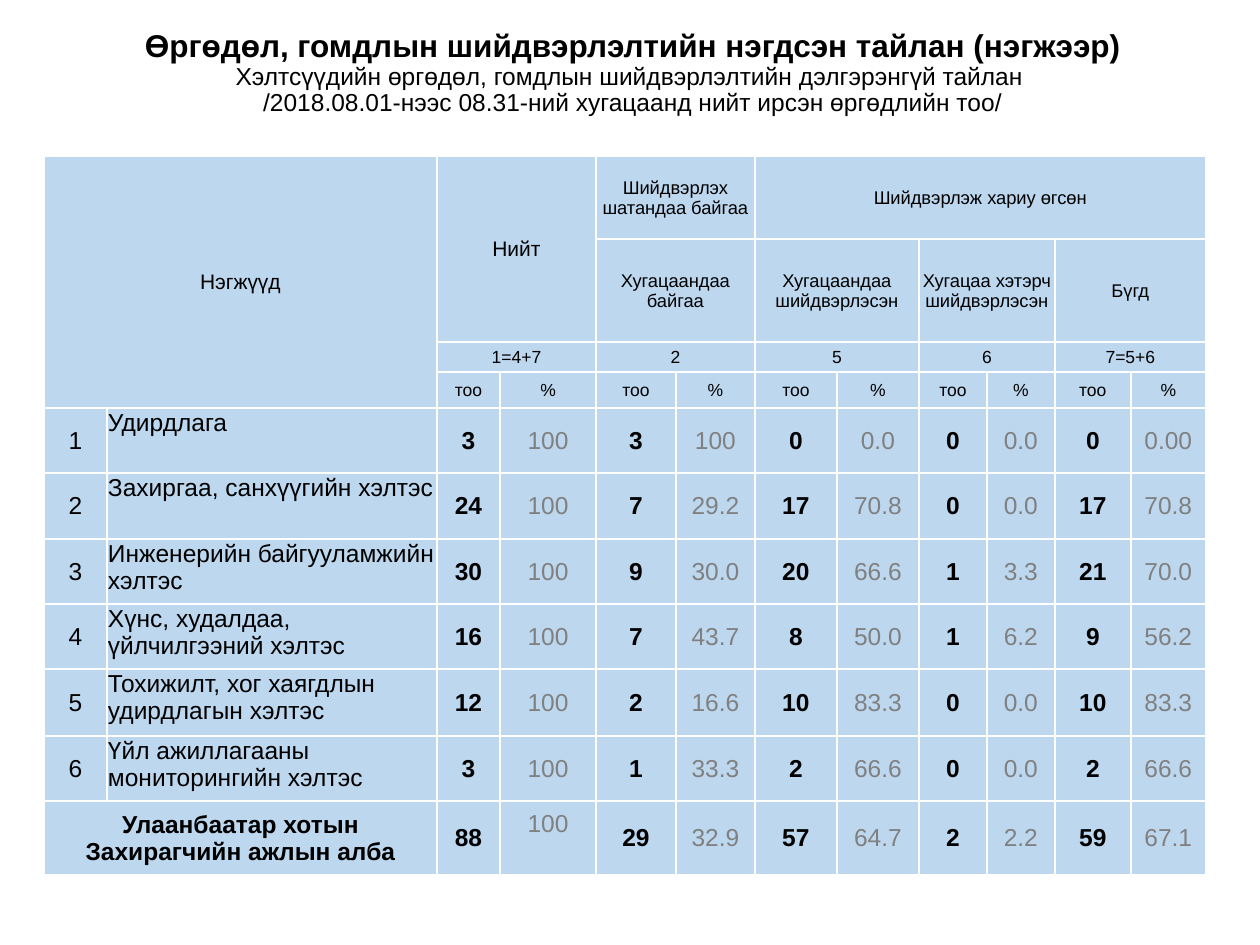
import pptx
import pptx.dml.color
import pptx.enum.text
import pptx.util
import lxml.etree
import pptx.oxml.ns

BLACK = pptx.dml.color.RGBColor(0x00, 0x00, 0x00)
GRAY = pptx.dml.color.RGBColor(0x80, 0x80, 0x80)
WHITE = pptx.dml.color.RGBColor(0xFF, 0xFF, 0xFF)
PALE_BLUE = pptx.dml.color.RGBColor(0xBD, 0xD7, 0xEE)
FONT = "Arial"
CENTER = pptx.enum.text.PP_ALIGN.CENTER
LEFT = pptx.enum.text.PP_ALIGN.LEFT
MIDDLE = pptx.enum.text.MSO_ANCHOR.MIDDLE
TOP = pptx.enum.text.MSO_ANCHOR.TOP

TITLE_LINES = [
    ("Өргөдөл, гомдлын шийдвэрлэлтийн нэгдсэн тайлан (нэгжээр)", 18, True),
    ("Хэлтсүүдийн өргөдөл, гомдлын шийдвэрлэлтийн дэлгэрэнгүй тайлан ", 14, False),
    ("/2018.08.01-нээс 08.31-ний хугацаанд нийт ирсэн өргөдлийн тоо/", 14, False),
]
HEADERS = [
    # row, column, row span, column span, text, size
    (0, 0, 4, 2, "Нэгжүүд", 12),
    (0, 2, 2, 2, "Нийт", 12),
    (0, 4, 1, 2, "Шийдвэрлэх шатандаа байгаа", 10.5),
    (0, 6, 1, 6, "Шийдвэрлэж хариу өгсөн", 10.5),
    (1, 4, 1, 2, "Хугацаандаа байгаа", 10.5),
    (1, 6, 1, 2, "Хугацаандаа шийдвэрлэсэн", 10.5),
    (1, 8, 1, 2, "Хугацаа хэтэрч шийдвэрлэсэн", 10.5),
    (1, 10, 1, 2, "Бүгд", 10.5),
]
FORMULAS = ["1=4+7", "2", "5", "6", "7=5+6"]
MEASURES = ["тоо", "%"]
DEPARTMENTS = [
    ("Удирдлага", "3 100 3 100 0 0.0 0 0.0 0 0.00"),
    ("Захиргаа, санхүүгийн хэлтэс", "24 100 7 29.2 17 70.8 0 0.0 17 70.8"),
    ("Инженерийн байгууламжийн хэлтэс", "30 100 9 30.0 20 66.6 1 3.3 21 70.0"),
    ("Хүнс, худалдаа, үйлчилгээний хэлтэс", "16 100 7 43.7 8 50.0 1 6.2 9 56.2"),
    ("Тохижилт, хог хаягдлын удирдлагын хэлтэс", "12 100 2 16.6 10 83.3 0 0.0 10 83.3"),
    ("Үйл ажиллагааны мониторингийн хэлтэс", "3 100 1 33.3 2 66.6 0 0.0 2 66.6"),
]
TOTAL = ("Улаанбаатар хотын Захирагчийн ажлын алба",
         "88 100 29 32.9 57 64.7 2 2.2 59 67.1")

COLUMN_WIDTHS = [63, 330, 63, 96, 80, 79, 82, 82, 68, 68, 76, 75]
ROW_HEIGHTS = [83, 103, 30, 36, 65, 66, 65, 65, 67, 65, 74]
FIRST_DEPARTMENT_ROW = 4
FIRST_VALUE_COLUMN = 2


def px(length):
    return pptx.util.Emu(round(length * 914400 / 126))


def add_text(para, text, size=14, bold=False, color=BLACK, align=CENTER):
    para.alignment = align
    span = para.add_run()
    span.text = text
    span.font.name = FONT
    span.font.size = pptx.util.Pt(size)
    span.font.bold = bold
    span.font.color.rgb = color


def format_cell(cell):
    properties = cell._tc.get_or_add_tcPr()
    for side in ("lnL", "lnR", "lnT", "lnB"):
        line = lxml.etree.SubElement(properties, pptx.oxml.ns.qn("a:" + side), w="12700")
        fill = lxml.etree.SubElement(line, pptx.oxml.ns.qn("a:solidFill"))
        lxml.etree.SubElement(fill, pptx.oxml.ns.qn("a:srgbClr"), val=str(WHITE))
    cell.fill.solid()
    cell.fill.fore_color.rgb = PALE_BLUE
    cell.margin_left = cell.margin_right = cell.margin_top = px(1)
    cell.margin_bottom = px(0)
    cell.vertical_anchor = MIDDLE


def fill_cell(table, row, column, text, rows=1, columns=1, anchor=MIDDLE, **style):
    cell = table.cell(row, column)
    if rows > 1 or columns > 1:
        cell.merge(table.cell(row + rows - 1, column + columns - 1))
    cell.vertical_anchor = anchor
    add_text(cell.text_frame.paragraphs[0], text, **style)


def fill_values(table, row, values):
    for offset, value in enumerate(values.split()):
        is_count = offset % 2 == 0
        fill_cell(table, row, FIRST_VALUE_COLUMN + offset, value,
                  bold=is_count, color=BLACK if is_count else GRAY)


def add_title(page):
    box = page.shapes.title
    box.left, box.top, box.width, box.height = px(103), px(15), px(1060), px(117)
    box.text_frame.vertical_anchor = MIDDLE
    para = box.text_frame.paragraphs[0]
    para.line_spacing = 0.9
    for index, (text, size, bold) in enumerate(TITLE_LINES):
        if index:
            para.add_line_break()
        add_text(para, text, size=size, bold=bold)


def add_report(page):
    table = page.shapes.add_table(
        len(ROW_HEIGHTS), len(COLUMN_WIDTHS), px(44), px(156),
        px(sum(COLUMN_WIDTHS)), px(sum(ROW_HEIGHTS))).table
    table.first_row = table.horz_banding = False
    for column, width in zip(table.columns, COLUMN_WIDTHS):
        column.width = px(width)
    for row, height in zip(table.rows, ROW_HEIGHTS):
        row.height = px(height)
    for cell in table.iter_cells():
        format_cell(cell)

    for row, column, rows, columns, text, size in HEADERS:
        fill_cell(table, row, column, text, rows, columns, size=size)
    for group, formula in enumerate(FORMULAS):
        column = FIRST_VALUE_COLUMN + 2 * group
        fill_cell(table, 2, column, formula, columns=2, size=10)
        for offset, measure in enumerate(MEASURES):
            fill_cell(table, 3, column + offset, measure, size=10)

    for index, (name, values) in enumerate(DEPARTMENTS):
        row = FIRST_DEPARTMENT_ROW + index
        fill_cell(table, row, 0, str(index + 1))
        fill_cell(table, row, 1, name, anchor=TOP, align=LEFT)
        fill_values(table, row, values)

    total_row = FIRST_DEPARTMENT_ROW + len(DEPARTMENTS)
    fill_cell(table, total_row, 0, TOTAL[0], columns=2, bold=True)
    fill_values(table, total_row, TOTAL[1])
    table.cell(total_row, FIRST_VALUE_COLUMN + 1).margin_bottom = px(28)


def main():
    deck = pptx.Presentation()
    deck.slide_width, deck.slide_height = px(1260), px(945)
    page = deck.slides.add_slide(deck.slide_layouts[5])
    add_title(page)
    add_report(page)
    deck.save("out.pptx")


if __name__ == "__main__":
    main()
